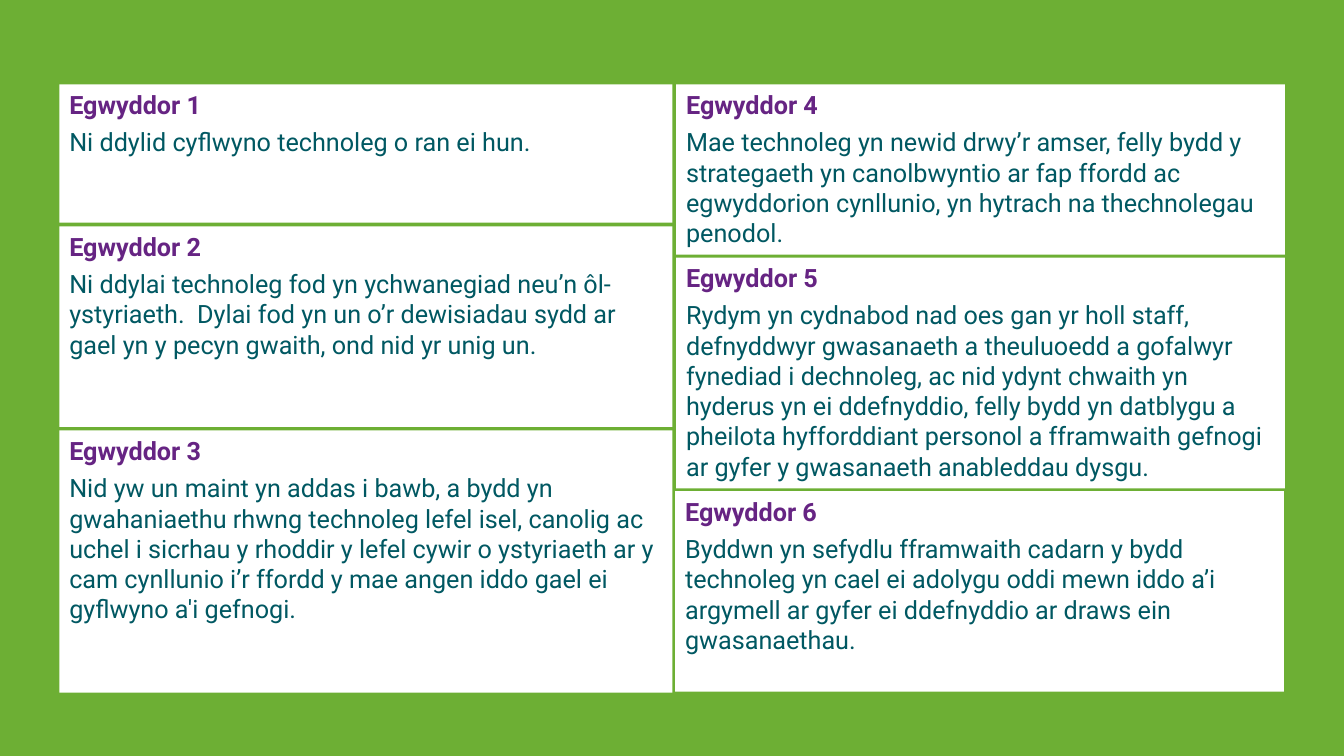
from pptx import Presentation
from pptx.dml.color import RGBColor
from pptx.enum import shapes, text
from pptx.util import Pt

GREEN = RGBColor(0x6D, 0xAF, 0x34)
WHITE = RGBColor(0xFF, 0xFF, 0xFF)
PURPLE = RGBColor(0x66, 0x24, 0x83)
TEAL = RGBColor(0x00, 0x58, 0x62)

# Each principle: panel height, sideways shift, wording
LEFT_PRINCIPLES = [
    (98.8, 0, "Ni ddylid cyflwyno technoleg o ran ei hun."),
    (143.2, 0, "Ni ddylai technoleg fod yn ychwanegiad neu’n ôl-ystyriaeth.  "
     "Dylai fod yn un o’r dewisiadau sydd ar gael yn y pecyn gwaith, "
     "ond nid yr unig un."),
    (187.2, 0, "Nid yw un maint yn addas i bawb, a bydd yn gwahaniaethu rhwng "
     "technoleg lefel isel, canolig ac uchel i sicrhau y rhoddir y lefel "
     "cywir o ystyriaeth ar y cam cynllunio i’r ffordd y mae angen iddo "
     "gael ei gyflwyno a'i gefnogi."),
]
RIGHT_PRINCIPLES = [
    (121.7, 0, "Mae technoleg yn newid drwy’r amser, felly bydd y strategaeth "
     "yn canolbwyntio ar fap ffordd ac egwyddorion cynllunio, yn hytrach "
     "na thechnolegau penodol."),
    (164.9, 0, "Rydym yn cydnabod nad oes gan yr holl staff, defnyddwyr "
     "gwasanaeth a theuluoedd a gofalwyr fynediad i dechnoleg, ac nid ydynt "
     "chwaith yn hyderus yn ei ddefnyddio, felly bydd yn datblygu a pheilota "
     "hyfforddiant personol a fframwaith gefnogi ar gyfer y gwasanaeth "
     "anableddau dysgu."),
    (143.2, -0.7, "Byddwn yn sefydlu fframwaith cadarn y bydd technoleg yn cael "
     "ei adolygu oddi mewn iddo a’i argymell ar gyfer ei ddefnyddio ar draws "
     "ein gwasanaethau."),
]


def write(paragraph, wording, *, color, bold=False, size=18, after=5):
    paragraph.alignment = text.PP_ALIGN.LEFT
    paragraph.space_after = Pt(after)
    run = paragraph.add_run()
    run.text = wording
    run.font.name = "Roboto"
    run.font.size = Pt(size)
    run.font.bold = bold
    run.font.color.rgb = color


def add_principle(slide, number, wording, left, top, width, height):
    panel = slide.shapes.add_shape(shapes.MSO_SHAPE.RECTANGLE, Pt(left), Pt(top),
                                   Pt(width), Pt(height))
    panel.shadow.inherit = False
    panel.fill.solid()
    panel.fill.fore_color.rgb = WHITE
    panel.line.fill.background()
    frame = panel.text_frame
    frame.word_wrap = True
    frame.vertical_anchor = text.MSO_ANCHOR.TOP
    write(frame.paragraphs[0], f"Egwyddor {number}", color=PURPLE, bold=True)
    write(frame.add_paragraph(), wording, color=TEAL)


def add_column(slide, principles, first_number, left, top, width, gap):
    """Stack the principles downwards from the top of the column."""
    for number, (height, shift, wording) in enumerate(principles, first_number):
        add_principle(slide, number, wording, left + shift, top, width, height)
        top += height + gap


def build_principles_slide(deck):
    slide = deck.slides.add_slide(deck.slide_layouts[6])
    slide.background.fill.solid()
    slide.background.fill.fore_color.rgb = GREEN
    add_column(slide, LEFT_PRINCIPLES, 1, left=42.4, top=60.3, width=437.8, gap=2.6)
    add_column(slide, RIGHT_PRINCIPLES, 4, left=483, top=60.3, width=434.9, gap=2)


def main():
    deck = Presentation()
    deck.slide_width, deck.slide_height = Pt(960), Pt(540)
    build_principles_slide(deck)
    deck.save("out.pptx")


if __name__ == "__main__":
    main()
